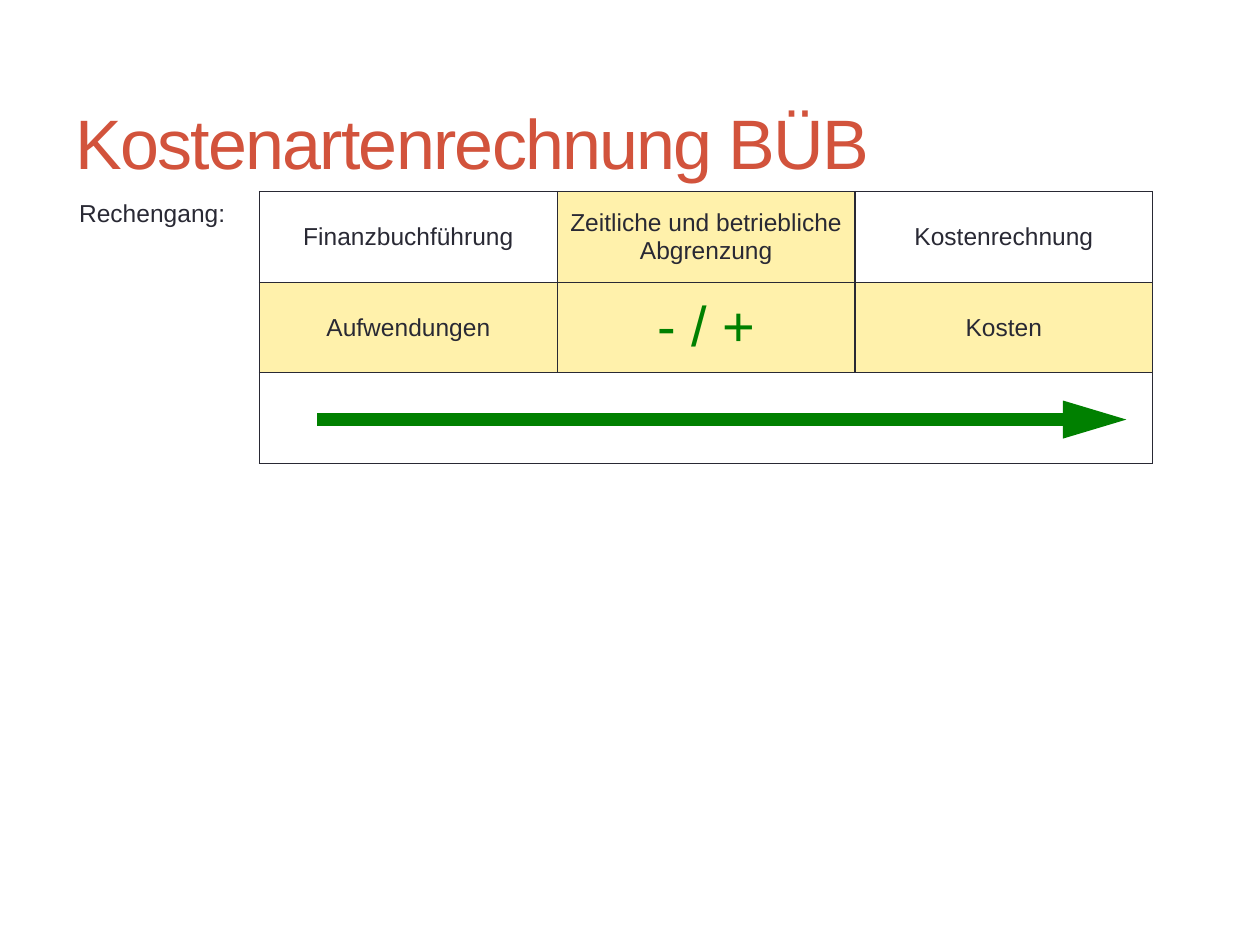
from lxml.etree import SubElement
from pptx import Presentation
from pptx.dml.color import RGBColor
from pptx.enum.shapes import MSO_CONNECTOR
from pptx.enum.text import MSO_ANCHOR as Anchor, PP_ALIGN as Align
from pptx.oxml.ns import qn
from pptx.util import Inches, Pt

INK = RGBColor(0x29, 0x29, 0x34)
RED = RGBColor(0xD2, 0x53, 0x3C)
GREEN = RGBColor(0x00, 0x80, 0x00)
YELLOW = RGBColor(0xFF, 0xF1, 0xAB)

ROWS = [
    ["Finanzbuchführung", "Zeitliche und betriebliche Abgrenzung", "Kostenrechnung"],
    ["Aufwendungen", "- / +", "Kosten"],
    ["", "", ""],
]
HIGHLIGHTED = {(0, 1), (1, 0), (1, 1), (1, 2)}
BODY = {"size": Pt(14), "color": INK}
OPERATOR = {"size": Pt(32), "color": GREEN}


def write(tf, text, size, color):
    """Put one Arial run into the first paragraph and return the run."""
    r = tf.paragraphs[0].add_run()
    r.text = text
    for name, value in {"name": "Arial", "size": size}.items():
        setattr(r.font, name, value)
    r.font.color.rgb = color
    return r


def add_border(cell, side, width):
    ln = SubElement(cell._tc.get_or_add_tcPr(), qn(f"a:ln{side}"), w=str(Pt(width)))
    fill = SubElement(ln, qn("a:solidFill"))
    SubElement(fill, qn("a:srgbClr"), val=str(INK))


prs = Presentation()
prs.slide_width, prs.slide_height = Inches(10), Inches(7.5)
s = prs.slides.add_slide(prs.slide_layouts[6])

# Title and label
title = s.shapes.add_textbox(Inches(0.5), Inches(0.58), Inches(9), Inches(1.08))
tf = title.text_frame
tf.word_wrap = True
tf.vertical_anchor = Anchor.MIDDLE
r = write(tf, "Kostenartenrechnung BÜB", Pt(40), RED)
r._r.get_or_add_rPr().set("spc", "-100")

label = s.shapes.add_textbox(Inches(0.53), Inches(1.52), Inches(7.17), Inches(0.3))
label.text_frame.word_wrap = True
write(label.text_frame, "Rechengang:", **BODY)

# Table
frame = s.shapes.add_table(3, 3, Inches(2.06), Inches(1.52), Inches(7.09), Inches(2.16))
table = frame.table
table.first_row = table.horz_banding = False
for row, texts in enumerate(ROWS):
    for col, text in enumerate(texts):
        cell = table.cell(row, col)
        outer = {"L": col == 0, "R": col == 2, "T": row == 0, "B": row == 2}
        if row == 2:
            outer["L"] = outer["R"] = True
        for side, is_outer in outer.items():
            add_border(cell, side, 1 if is_outer else 0.75)
        if (row, col) in HIGHLIGHTED:
            cell.fill.solid()
            cell.fill.fore_color.rgb = YELLOW
        else:
            cell.fill.background()
        cell.vertical_anchor = Anchor.MIDDLE
        if text:
            cell.text_frame.paragraphs[0].alignment = Align.CENTER
            write(cell.text_frame, text, **(OPERATOR if text == "- / +" else BODY))
table.cell(2, 0).merge(table.cell(2, 2))

# Arrow in the merged bottom row
arrow = s.shapes.add_connector(
    MSO_CONNECTOR.STRAIGHT, Inches(2.52), Inches(3.33), Inches(8.94), Inches(3.33)
)
arrow.line.color.rgb = GREEN
arrow.line.width = Pt(7.25)
SubElement(arrow.line._get_or_add_ln(), qn("a:tailEnd"), type="triangle", w="med", len="lg")
SubElement(arrow._element.spPr, qn("a:effectLst"))

prs.save("out.pptx")
